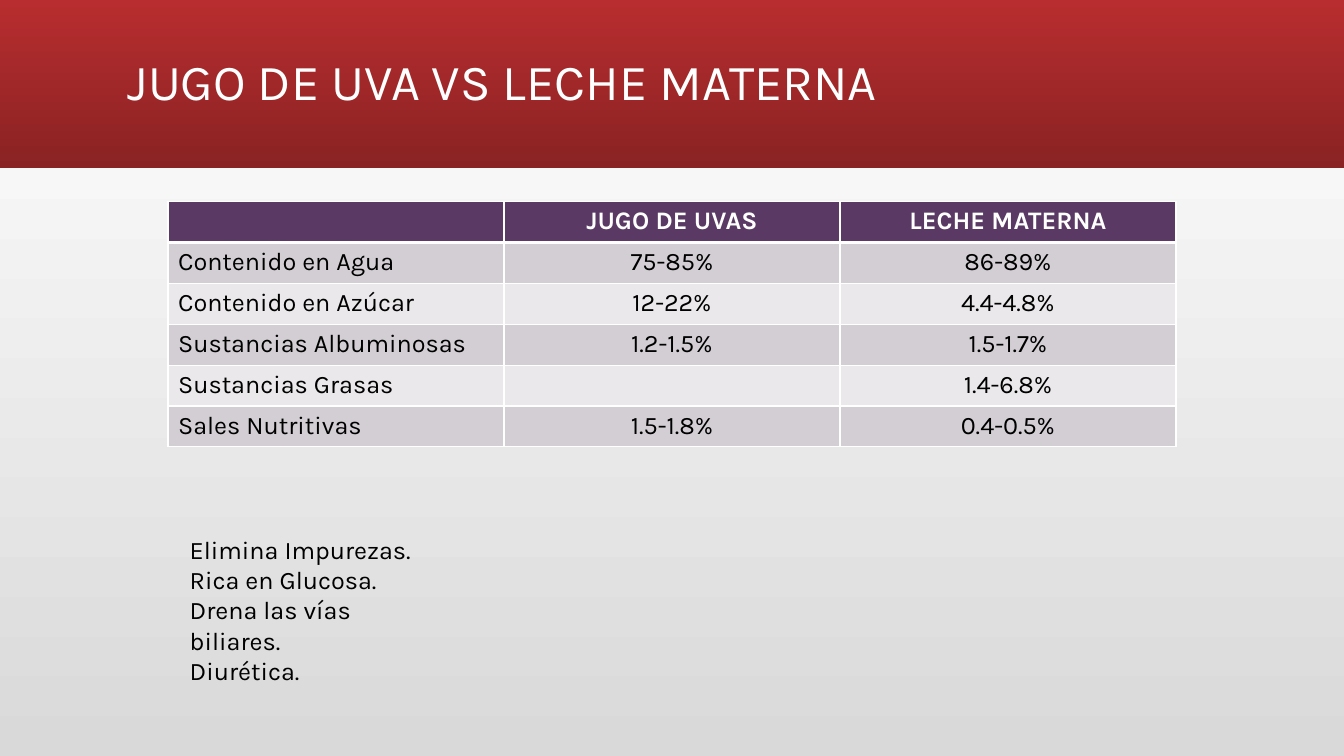
from lxml.etree import SubElement
from pptx import Presentation
from pptx.dml.color import RGBColor
from pptx.enum.shapes import MSO_SHAPE as Shape
from pptx.enum.text import MSO_ANCHOR as Anchor, PP_ALIGN as Align
from pptx.oxml import parse_xml
from pptx.oxml.ns import nsdecls, qn
from pptx.util import Inches, Pt

COLUMNS, ROWS = 16, 9
TITLE_ONLY = 5

HEADERS = ["", "JUGO DE UVAS", "LECHE MATERNA"]
CONTENTS = [
    ["Contenido en Agua", "75-85%", "86-89%"],
    ["Contenido en Azúcar", "12-22%", "4.4-4.8%"],
    ["Sustancias Albuminosas", "1.2-1.5%", "1.5-1.7%"],
    ["Sustancias Grasas", "", "1.4-6.8%"],
    ["Sales Nutritivas", "1.5-1.8%", "0.4-0.5%"],
]
BENEFITS = ["Elimina Impurezas.", "Rica en Glucosa.",
            "Drena las vías biliares.", "Diurética."]


def color(value):
    return RGBColor.from_string(value)


class SlideBuilder:
    font = "Karla"
    white, black, plum = "FFFFFF", "000000", "5A3A64"
    stripes = ["D2CED3", "EAE8EA"]

    def __init__(self, deck):
        self.column = deck.slide_width / COLUMNS
        self.row = deck.slide_height / ROWS
        self.page = deck.slides.add_slide(deck.slide_layouts[TITLE_ONLY])

    def area(self, left, top, width, height):
        return (round(left * self.column), round(top * self.row),
                round(width * self.column), round(height * self.row))

    def gradient(self, fill, start, end, angle):
        fill.gradient()
        fill.gradient_angle = angle
        for stop, value in zip(fill.gradient_stops, (start, end)):
            stop.color.rgb = color(value)

    def add_text(self, para, text, ink, size=18, align=Align.LEFT, bold=False):
        para.alignment = align
        span = para.add_run()
        span.text = text
        for name, value in {"name": self.font, "size": Pt(size), "bold": bold}.items():
            setattr(span.font, name, value)
        span.font.color.rgb = color(ink)

    def band(self, area, start, end):
        box = self.page.shapes.add_shape(Shape.RECTANGLE, *self.area(*area))
        box.shadow.inherit = False
        box.line.fill.background()
        self.gradient(box.fill, start, end, 270)
        # Send the band behind the title
        self.page.shapes._spTree.insert(2, box._element)

    def title(self, text, area):
        box = self.page.shapes.title
        box.left, box.top, box.width, box.height = self.area(*area)
        frame = box.text_frame
        frame.vertical_anchor = Anchor.MIDDLE
        frame.word_wrap = True
        para = frame.paragraphs[0]
        para.line_spacing = 0.9
        self.add_text(para, text, self.white, size=36)

    def lines(self, texts, area):
        frame = self.page.shapes.add_textbox(*self.area(*area)).text_frame
        frame.word_wrap = True
        for index, text in enumerate(texts):
            para = frame.add_paragraph() if index else frame.paragraphs[0]
            self.add_text(para, text, self.black)

    def borders(self, cell, widths):
        properties = cell._tc.get_or_add_tcPr()
        for index, (side, points) in enumerate(widths.items()):
            line = parse_xml(f'<a:ln{side} {nsdecls("a")} w="{Pt(points)}"/>')
            fill = SubElement(line, qn("a:solidFill"))
            SubElement(fill, qn("a:srgbClr"), val=self.white)
            properties.insert(index, line)

    def table(self, records, area):
        shape = self.page.shapes.add_table(
            len(records), len(records[0]), *self.area(*area))
        grid = shape.table
        grid.horz_banding = False
        for r, record in enumerate(records):
            header = r == 0
            for c, text in enumerate(record):
                cell = grid.cell(r, c)
                cell.fill.solid()
                cell.fill.fore_color.rgb = color(
                    self.plum if header else self.stripes[(r - 1) % 2])
                # The rule under the header is thicker
                self.borders(cell, {"L": 1, "R": 1, "T": 3 if r == 1 else 1,
                                    "B": 3 if header else 1})
                if text:
                    self.add_text(cell.text_frame.paragraphs[0], text,
                                  self.white if header else self.black,
                                  align=Align.CENTER if c else Align.LEFT, bold=header)


def main():
    deck = Presentation()
    deck.slide_width, deck.slide_height = Inches(13.33), Inches(7.5)
    builder = SlideBuilder(deck)

    # Background and heading
    builder.gradient(builder.page.background.fill, "D9D9D9", "FFFFFF", 90)
    builder.band((0, 0, COLUMNS, 2), "B82D2F", "8A2223")
    builder.title("JUGO DE UVA VS LECHE MATERNA", (1.4, 0.13, 13.2, 1.74))

    # Comparison and benefits
    builder.table([HEADERS] + CONTENTS, (2, 2.4, 12, 2.92))
    builder.lines(BENEFITS, (2.14, 6.3, 3.16, 1.94))

    deck.save("out.pptx")


if __name__ == "__main__":
    main()
